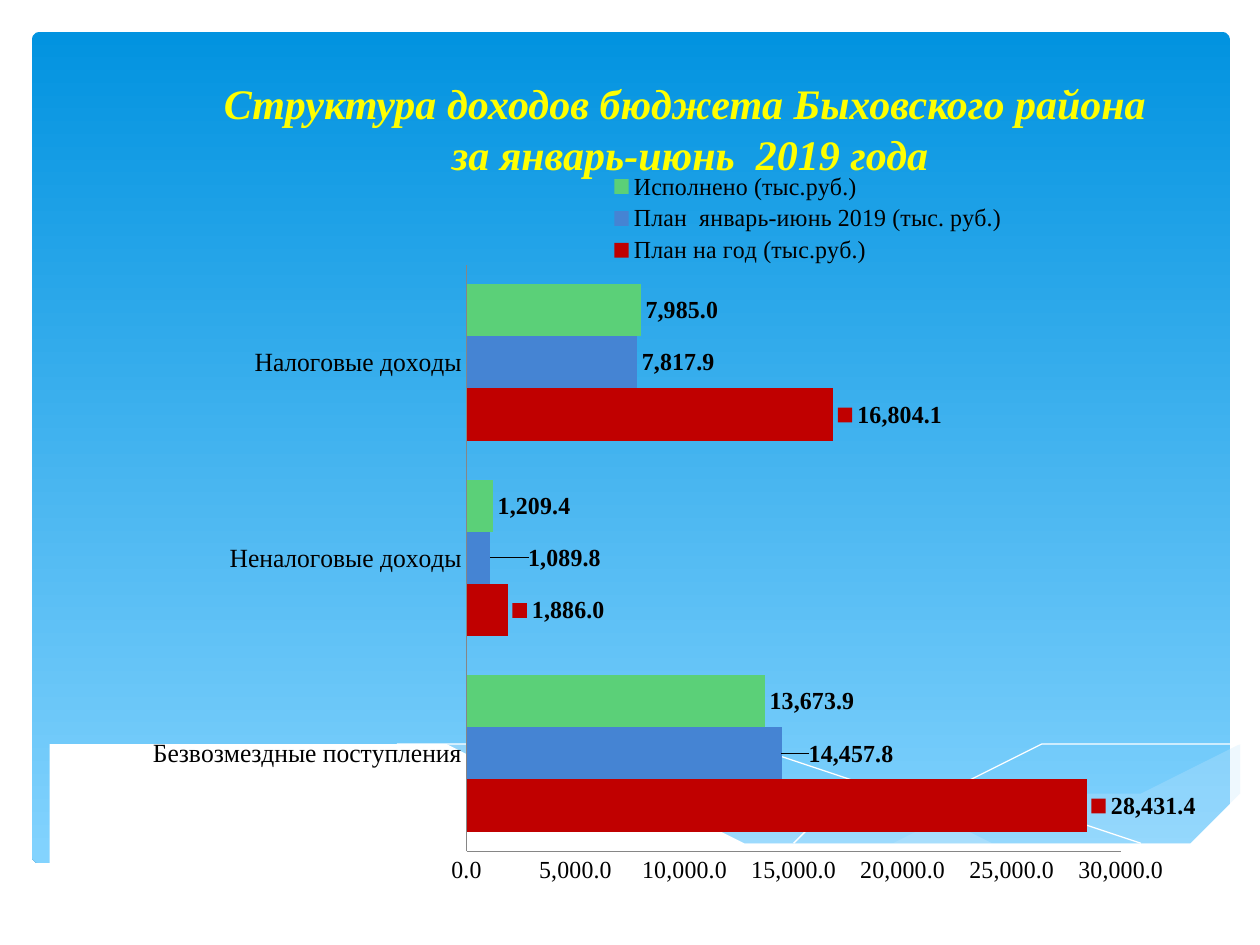
from lxml.etree import SubElement
from pptx import Presentation
from pptx.chart.data import CategoryChartData
from pptx.dml.color import RGBColor
from pptx.enum.chart import XL_CHART_TYPE, XL_LABEL_POSITION, XL_LEGEND_POSITION, XL_TICK_MARK
from pptx.enum.shapes import MSO_SHAPE
from pptx.enum.text import MSO_ANCHOR, MSO_AUTO_SIZE, PP_ALIGN
from pptx.oxml import parse_xml
from pptx.oxml.ns import nsdecls, qn
from pptx.util import Cm, Pt

COLORS = {
    "sky_top": "0293E0", "sky_bottom": "83D3FE", "wave": "C6E7FC", "white": "FFFFFF",
    "title": "FFFF00", "text": "000000", "axis": "868686",
    "year": "C00000", "half": "4584D3", "done": "5BD078",
}
FONT = "Times New Roman"
NUMBER = "#,##0.0"
CATEGORIES = ["Безвозмездные поступления", "Неналоговые доходы", "Налоговые доходы"]
SERIES = [
    ("План на год (тыс.руб.)", "year", (28431.4, 1886.0, 16804.1)),
    ("План  январь-июнь 2019 (тыс. руб.)", "half", (14457.8, 1089.8, 7817.9)),
    ("Исполнено (тыс.руб.)", "done", (13673.9, 1209.4, 7985.0)),
]
# Wave outlines, in centimetres
RIGHT_WAVE = [
    (24.8, 15.27), (23.42, 15.52), (21.89, 15.88), (19.81, 16.36), (17.96, 16.74),
    (16.81, 16.94), (18.26, 17.12), (19.56, 17.25), (20.7, 17.27), (21.95, 17.2),
    (23.04, 17.04), (23.98, 16.79), (24.82, 16.48)]
MIDDLE_WAVE = [
    (22.71, 17.15), (21.29, 16.94), (19.71, 16.66), (17.96, 16.31), (16, 15.85),
    (14.1, 15.42), (12.42, 15.14), (10.67, 14.96), (9.19, 14.91), (7.29, 15.06),
    (8.71, 15.27), (10.29, 15.57), (11.43, 15.85), (13.46, 16.31), (15.29, 16.69),
    (16.92, 16.97), (18.36, 17.17), (19.96, 17.27), (21.31, 17.27)]
FALLING_LINE = [
    (7.87, 15.16), (8.74, 15.04), (10.21, 14.96), (11.91, 14.99), (13.54, 15.14),
    (15.47, 15.39), (17.68, 15.77), (20.22, 16.33), (23.06, 17.09)]
RISING_LINE = [
    (15.6, 16.74), (17.1, 16.33), (19.02, 15.88), (21.26, 15.39), (22.78, 15.14),
    (23.85, 14.99), (24.79, 14.91)]
WHITE_WAVE = [
    (24.82, 16.46), (23.88, 16.79), (22.53, 17.09), (20.9, 17.25), (18.9, 17.17),
    (16.97, 16.94), (14.71, 16.54), (12.78, 16.13), (10.62, 15.62), (8.64, 15.21),
    (6.88, 14.99), (5.36, 14.88), (4.09, 14.88), (2.69, 15.01), (1.7, 15.21),
    (0.91, 15.47), (0.58, 15.62), (0.58, 18.57), (24.82, 18.57)]


def rgb(name):
    return RGBColor.from_string(COLORS[name])


def set_font(font, size, color="text", **style):
    for key, value in {"name": FONT, "size": Pt(size), **style}.items():
        setattr(font, key, value)
    font.color.rgb = rgb(color)


def add_sky(s):
    sp = s.shapes.add_shape(MSO_SHAPE.ROUNDED_RECTANGLE, Cm(0.64), Cm(0.64), Cm(24.16), Cm(16.76))
    sp.adjustments[0] = 0.01
    sp.shadow.inherit = False
    sp.line.fill.background()
    sp.fill.gradient()
    sp.fill.gradient_angle = 270
    for stop, name, position in zip(sp.fill.gradient_stops, ("sky_top", "sky_bottom"), (0, 1)):
        stop.color.rgb = rgb(name)
        stop.position = position


def draw_path(s, points, close):
    builder = s.shapes.build_freeform(*points[0], scale=Cm(1))
    builder.add_line_segments(points[1:], close=close)
    sp = builder.convert_to_shape()
    sp.shadow.inherit = False
    return sp


def add_wave(s, points, color, opacity=100):
    sp = draw_path(s, points, True)
    sp.line.fill.background()
    sp.fill.solid()
    sp.fill.fore_color.rgb = rgb(color)
    if opacity < 100:
        clr = sp.fill._xPr.find(".//" + qn("a:srgbClr"))
        SubElement(clr, qn("a:alpha"), val=str(opacity * 1000))


def add_curve(s, points):
    sp = draw_path(s, points, False)
    sp.fill.background()
    sp.line.color.rgb = rgb("white")
    sp.line.width = 0


def add_title(s):
    title = s.shapes.title
    s.shapes._spTree.append(title._element)  # in front of the waves
    frame = {"left": Cm(1.91), "top": Cm(1.14), "width": Cm(24), "height": Cm(2.59)}
    for key, value in frame.items():
        setattr(title, key, value)
    tf = title.text_frame
    tf.text = "Структура доходов бюджета Быховского района \vза январь-июнь  2019 года"
    tf.auto_size = MSO_AUTO_SIZE.NONE
    tf.vertical_anchor = MSO_ANCHOR.BOTTOM
    p = tf.paragraphs[0]
    p.alignment = PP_ALIGN.CENTER
    for r in p.runs:
        set_font(r.font, 24, "title", bold=True, italic=True)


def layout_xml(target=None, **box):
    """Manual chart layout; a label takes offsets, other parts take fractions."""
    parts = [("layoutTarget", target)] if target else []
    if "w" in box:
        parts += [("xMode", "edge"), ("yMode", "edge")]
    parts += box.items()
    inner = "".join(f'<c:{tag} val="{value}"/>' for tag, value in parts)
    return parse_xml(f'<c:layout {nsdecls("c")}><c:manualLayout>{inner}</c:manualLayout></c:layout>')


def set_layout(element, after, layout):
    for old in element.findall(qn("c:layout")):
        element.remove(old)
    if after is None:
        element.insert(0, layout)
    else:
        element.find(qn(after)).addnext(layout)


def format_series(series, color):
    series.format.fill.solid()
    series.format.fill.fore_color.rgb = rgb(color)
    series.invert_if_negative = False
    labels = series.data_labels
    values = {"show_value": True, "show_legend_key": color == "year", "number_format": NUMBER,
              "number_format_is_linked": False, "position": XL_LABEL_POSITION.OUTSIDE_END}
    for key, value in values.items():
        setattr(labels, key, value)
    set_font(labels.font, 14, bold=True)


def shift_label(series, index, x, y):
    label = series.points[index].data_label
    set_font(label.font, 14, bold=True)
    label.position = XL_LABEL_POSITION.OUTSIDE_END
    set_layout(label._dLbl, "c:idx", layout_xml(x=x, y=y))


def format_axis(axis, size):
    axis.has_major_gridlines = False
    axis.major_tick_mark = axis.minor_tick_mark = XL_TICK_MARK.NONE
    axis.format.line.color.rgb = rgb("axis")
    set_font(axis.tick_labels.font, size)


def add_income_chart(s):
    data = CategoryChartData(number_format=NUMBER)
    data.categories = CATEGORIES
    for name, _, values in SERIES:
        data.add_series(name, values)
    chart = s.shapes.add_chart(XL_CHART_TYPE.BAR_CLUSTERED, Cm(1.3), Cm(2.62),
                               Cm(22.81), Cm(15.52), data).chart
    chart.has_title = False
    set_font(chart.font, 18)
    plot = chart.plots[0]
    plot.gap_width = 75
    plot.overlap = 0
    plot.vary_by_categories = False
    for series, (_, color, _) in zip(plot.series, SERIES):
        format_series(series, color)
    shift_label(plot.series[1], 0, 0.02, 0)
    shift_label(plot.series[1], 1, 0.03, 0)

    format_axis(chart.category_axis, 15)
    axis = chart.value_axis
    format_axis(axis, 14)
    axis.minimum_scale, axis.maximum_scale, axis.major_unit = 0, 30000, 5000
    axis.tick_labels.number_format = NUMBER
    axis.tick_labels.number_format_is_linked = False

    chart.has_legend = True
    legend = chart.legend
    legend.position = XL_LEGEND_POSITION.TOP
    legend.include_in_layout = False
    set_font(legend.font, 14)
    set_layout(legend._element, "c:legendPos", layout_xml(x=0.49, y=0.05, w=0.37, h=0.13))
    plot_area = chart._chartSpace.chart.plotArea
    set_layout(plot_area, None, layout_xml("inner", x=0.365, y=0.175, w=0.594, h=0.762))


def main():
    prs = Presentation()
    prs.slide_width, prs.slide_height = Cm(25.4), Cm(19.05)
    s = prs.slides.add_slide(prs.slide_layouts[5])
    add_sky(s)
    add_wave(s, RIGHT_WAVE, "wave", 29)
    add_wave(s, MIDDLE_WAVE, "wave", 40)
    add_curve(s, FALLING_LINE)
    add_curve(s, RISING_LINE)
    add_wave(s, WHITE_WAVE, "white")
    add_title(s)
    add_income_chart(s)
    prs.save("out.pptx")


if __name__ == "__main__":
    main()
